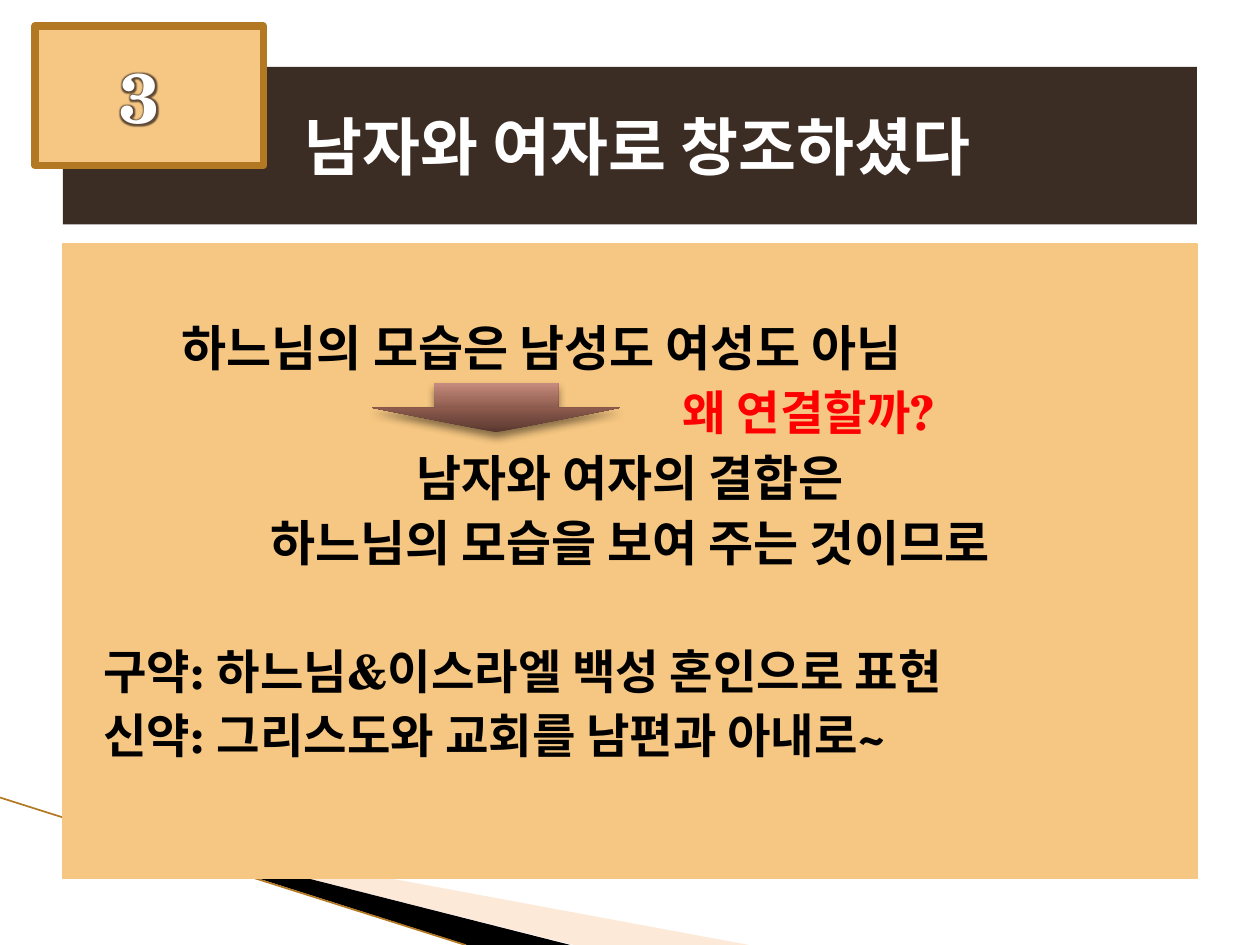
"""Build a slide on the union of man and woman as an image of God."""
from dataclasses import dataclass, field

from lxml.etree import SubElement
from pptx import Presentation
from pptx.dml.color import RGBColor
from pptx.enum.shapes import MSO_CONNECTOR, MSO_SHAPE
from pptx.enum.text import MSO_ANCHOR, PP_ALIGN
from pptx.oxml import parse_xml
from pptx.oxml.ns import nsdecls, qn
from pptx.util import Pt

FONT = "TeX Gyre Schola"
BLACK = RGBColor(0x00, 0x00, 0x00)
WHITE = RGBColor(0xFF, 0xFF, 0xFF)
RED = RGBColor(0xFF, 0x00, 0x00)
SAND = RGBColor(0xF6, 0xC7, 0x82)
PEACH = RGBColor(0xFB, 0xC9, 0x9E)
DARK = RGBColor(0x3B, 0x2C, 0x24)
BRONZE = RGBColor(0xB2, 0x78, 0x22)
ARROW_STOPS = (
    (0, RGBColor(0x59, 0x37, 0x2F)),
    (50, RGBColor(0x8D, 0x5B, 0x4D)),
    (70, RGBColor(0xA3, 0x6E, 0x60)),
    (100, RGBColor(0xC6, 0x8B, 0x7C)),
)


@dataclass(frozen=True)
class Line:
    text: str
    size: float
    color: RGBColor = BLACK
    indent: float = 0
    align: PP_ALIGN = PP_ALIGN.LEFT
    before: float = 4


@dataclass(frozen=True)
class Panel:
    left: float
    top: float
    width: float
    height: float
    fill: RGBColor
    lines: tuple[Line, ...]
    border: RGBColor | None = None
    border_width: float = 0.75
    anchor: MSO_ANCHOR = MSO_ANCHOR.MIDDLE
    margins: dict[str, float] = field(default_factory=dict)


@dataclass(frozen=True)
class Ribbon:
    points: tuple[tuple[float, float], ...]
    fill: RGBColor
    opacity: int = 100


RIBBONS = (
    Ribbon(((40, 468), (428, 540), (328, 540)), PEACH, 40),
    Ribbon(((38, 467), (326, 540), (267, 540)), BLACK),
)
BODY = Panel(
    36, 139.5, 648, 362.5, SAND,
    (
        Line("하느님의 모습은 남성도 여성도 아님", 28, indent=68, before=0),
        Line("왜 연결할까?", 27, RED, indent=354),
        Line("남자와 여자의 결합은", 28, align=PP_ALIGN.CENTER),
        Line("하느님의 모습을 보여 주는 것이므로", 28, align=PP_ALIGN.CENTER),
        Line("구약: 하느님&이스라엘 백성 혼인으로 표현", 27, indent=23, before=40.4),
        Line("신약: 그리스도와 교회를 남편과 아내로~", 27, indent=23),
    ),
    border=SAND, anchor=MSO_ANCHOR.TOP, margins={"margin_top": 42},
)
TITLE = Panel(
    36, 38.25, 648, 90, DARK,
    (Line("남자와 여자로 창조하셨다", 36, WHITE, indent=138, before=0),),
)
BADGE = Panel(
    20, 15, 130.5, 79.5, SAND,
    (Line("3", 40, WHITE, align=PP_ALIGN.CENTER, before=0),),
    border=BRONZE, border_width=4.33, margins={"margin_right": 11},
)


def apply(target: object, values: dict) -> None:
    """Set every named attribute on the target."""
    for name, value in values.items():
        setattr(target, name, value)


def draw_ribbon(page, ribbon: Ribbon) -> None:
    """Draw a filled sliver of the page decoration."""
    builder = page.shapes.build_freeform(*ribbon.points[0], scale=Pt(1))
    builder.add_line_segments(ribbon.points[1:], close=True)
    shape = builder.convert_to_shape()
    shape.shadow.inherit = False
    shape.line.fill.background()
    shape.fill.solid()
    shape.fill.fore_color.rgb = ribbon.fill
    color = shape._element.spPr.find(qn("a:solidFill"))[0]
    SubElement(color, qn("a:alpha"), val=str(ribbon.opacity * 1000))


def draw_edge(page) -> None:
    """Draw the thin line along the ribbons."""
    edge = page.shapes.add_connector(
        MSO_CONNECTOR.STRAIGHT, Pt(0), Pt(455.75), Pt(266), Pt(540))
    edge.line.width = Pt(0.95)
    edge.line.color.rgb = BRONZE
    SubElement(edge._element.spPr, qn("a:effectLst"))


def write_line(para, line: Line) -> object:
    """Write one line of text and return its span."""
    para._p.get_or_add_pPr().set("marL", str(Pt(line.indent)))
    apply(para, {"alignment": line.align, "space_before": Pt(line.before)})
    span = para.add_run()
    span.text = line.text
    apply(span.font, {"name": FONT, "size": Pt(line.size), "bold": True})
    span.font.color.rgb = line.color
    return span


def draw_panel(page, panel: Panel) -> list:
    """Draw a rectangle with its text and return the spans."""
    box = page.shapes.add_shape(
        MSO_SHAPE.RECTANGLE, Pt(panel.left), Pt(panel.top),
        Pt(panel.width), Pt(panel.height))
    box.shadow.inherit = False
    box.fill.solid()
    box.fill.fore_color.rgb = panel.fill
    if panel.border is None:
        box.line.fill.background()
    else:
        box.line.color.rgb = panel.border
        box.line.width = Pt(panel.border_width)
    frame = box.text_frame
    sides = ("margin_left", "margin_top", "margin_right", "margin_bottom")
    margins = {side: Pt(panel.margins.get(side, 0)) for side in sides}
    apply(frame, {"word_wrap": True, "vertical_anchor": panel.anchor, **margins})
    paras = [frame.paragraphs[0]]
    paras += [frame.add_paragraph() for _ in panel.lines[1:]]
    return [write_line(para, line) for para, line in zip(paras, panel.lines)]


def add_glow(span) -> None:
    """Put a soft dark glow around a span."""
    glow = parse_xml(
        f'<a:effectLst {nsdecls("a")}><a:glow rad="{Pt(4)}"><a:srgbClr val="{DARK}">'
        '<a:alpha val="80000"/></a:srgbClr></a:glow></a:effectLst>')
    span._r.rPr.find(qn("a:solidFill")).addnext(glow)


def draw_arrow(page) -> None:
    """Draw the shaded arrow that leads to the conclusion."""
    arrow = page.shapes.add_shape(
        MSO_SHAPE.DOWN_ARROW, Pt(212.5), Pt(219), Pt(142), Pt(28))
    arrow.line.fill.background()
    stops = "".join(
        f'<a:gs pos="{place * 1000}"><a:srgbClr val="{color}"/></a:gs>'
        for place, color in ARROW_STOPS)
    gradient = parse_xml(
        f'<a:gradFill {nsdecls("a")} rotWithShape="1"><a:gsLst>{stops}</a:gsLst>'
        '<a:lin ang="16200000" scaled="0"/></a:gradFill>')
    shadow = parse_xml(
        f'<a:effectLst {nsdecls("a")}><a:outerShdw blurRad="{Pt(5)}" dist="{Pt(3)}" '
        'dir="5400000" rotWithShape="0"><a:srgbClr val="000000">'
        '<a:alpha val="45000"/></a:srgbClr></a:outerShdw></a:effectLst>')
    properties = arrow._element.spPr
    properties.find(qn("a:prstGeom")).addnext(gradient)
    properties.append(shadow)


def main() -> None:
    """Build the deck and save it."""
    deck = Presentation()
    apply(deck, {"slide_width": Pt(720), "slide_height": Pt(540)})
    page = deck.slides.add_slide(deck.slide_layouts[6])
    for ribbon in RIBBONS:
        draw_ribbon(page, ribbon)
    draw_edge(page)
    draw_panel(page, BODY)
    draw_panel(page, TITLE)
    draw_arrow(page)
    add_glow(draw_panel(page, BADGE)[0])
    deck.save("out.pptx")


if __name__ == "__main__":
    main()
